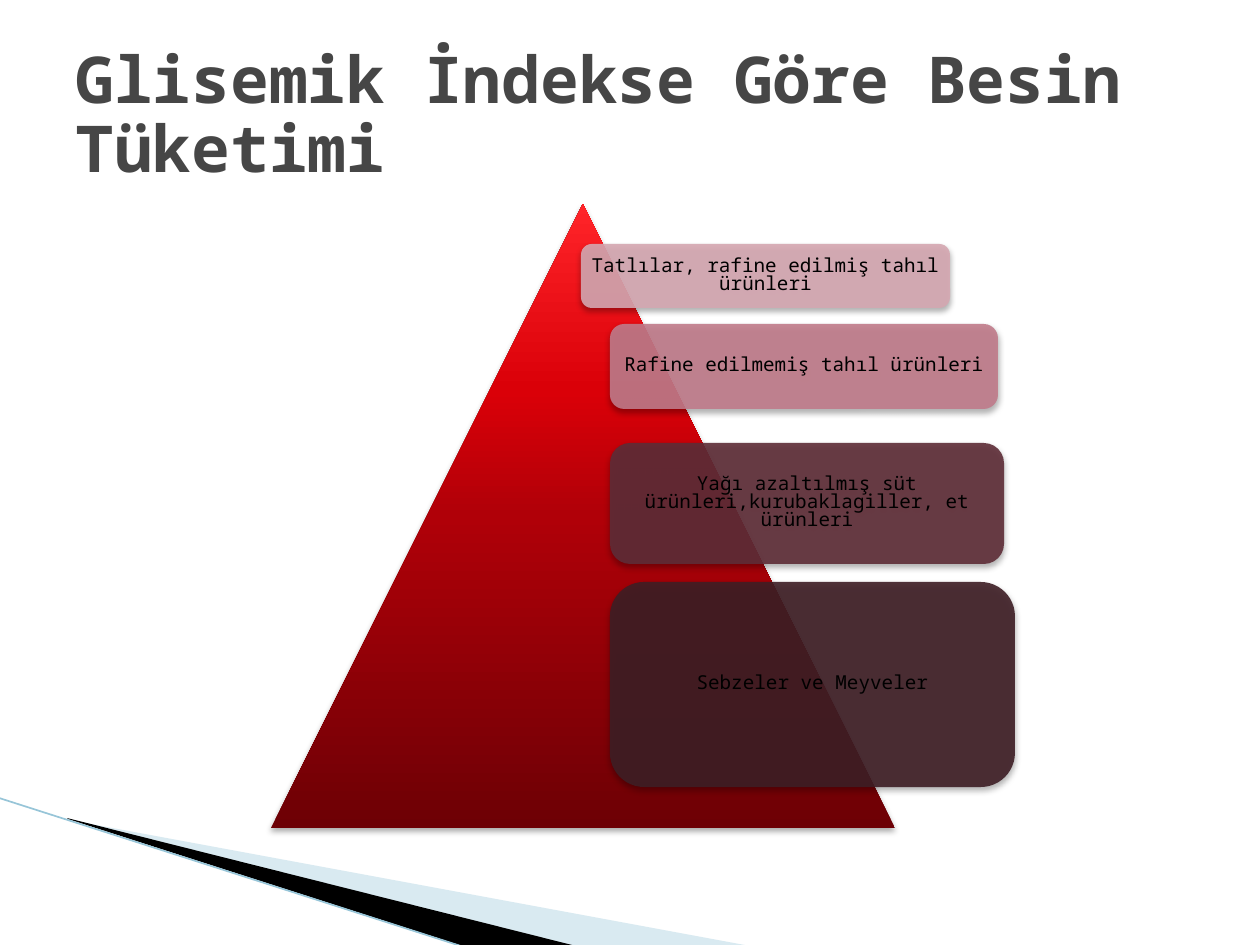
"""Build a slide with a food pyramid ranked by glycemic index."""
from lxml import etree
from pptx import Presentation
from pptx.dml.color import RGBColor
from pptx.enum.shapes import MSO_CONNECTOR, MSO_SHAPE
from pptx.enum.text import MSO_ANCHOR, PP_ALIGN
from pptx.oxml import parse_xml
from pptx.oxml.ns import nsdecls, qn
from pptx.util import Emu, Pt

UNIT = 914400 / 126
FONT = "Noto Sans Mono"
MIDDLE = MSO_ANCHOR.MIDDLE
LEFT, CENTER = PP_ALIGN.LEFT, PP_ALIGN.CENTER
HUES = {
    "title": "464646", "text": "000000", "pale": "A0CBDC", "black": "000000",
    "edge": "97C5D8", "sweet": "D5A7B1", "grain": "C07B8A",
    "dairy": "5E2D37", "green": "3E1E25",
}
STOPS = [(0, "6D0005"), (50, "B00008"), (70, "DA0008"), (100, "FF2429")]
SHADOW = (
    f'<a:outerShdw {nsdecls("a")} blurRad="{Pt(3.5)}" dist="{Pt(2.2)}" '
    'dir="5400000" rotWithShape="0"><a:srgbClr val="000000">'
    '<a:alpha val="32000"/></a:srgbClr></a:outerShdw>'
)


def paint(shape, hue, alpha=100, shade=False):
    shape.fill.solid()
    shape.fill.fore_color.rgb = RGBColor.from_string(HUES[hue])
    shape.line.fill.background()
    shape.shadow.inherit = False
    props = shape._element.spPr
    if alpha < 100:
        tint = props.find(qn("a:solidFill"))[0]
        etree.SubElement(tint, qn("a:alpha")).set("val", str(alpha * 1000))
    if shade:
        props.find(qn("a:effectLst")).append(parse_xml(SHADOW))


def write(shape, text, hue, align, space, face):
    frame = shape.text_frame
    frame.word_wrap = True
    frame.vertical_anchor = MIDDLE
    para = frame.paragraphs[0]
    para.text = text
    para.alignment = align
    para.line_spacing = space
    font = para.runs[0].font
    for key, value in face.items():
        setattr(font, key, value)
    font.color.rgb = RGBColor.from_string(HUES[hue])


deck = Presentation()
deck.slide_width, deck.slide_height = Emu(9144000), Emu(6858000)
slide = deck.slides.add_slide(deck.slide_layouts[6])
shapes = slide.shapes

waves = [
    ("pale", 40, [(69, 820), (750, 946), (575, 946), (69, 819)]),
    ("black", 100, [(67, 818), (576, 946), (469, 948), (68, 819)]),
]
for hue, alpha, points in waves:
    pen = shapes.build_freeform(*points[0], scale=UNIT)
    pen.add_line_segments(points[1:], close=True)
    paint(pen.convert_to_shape(), hue, alpha)

ends = [Emu(round(n * UNIT)) for n in (-1, 798, 467, 948)]
edge = shapes.add_connector(MSO_CONNECTOR.STRAIGHT, *ends)
edge.line.color.rgb = RGBColor.from_string(HUES["edge"])
edge.line.width = Pt(0.95)
etree.SubElement(edge._element.spPr, qn("a:effectLst"))

area = [Emu(round(n * UNIT)) for n in (271, 204, 624, 624)]
cone = shapes.add_shape(MSO_SHAPE.ISOSCELES_TRIANGLE, *area)
paint(cone, "black", shade=True)
stops = "".join(
    f'<a:gs pos="{at * 1000}"><a:srgbClr val="{tone}"/></a:gs>' for at, tone in STOPS
)
blend = parse_xml(
    f'<a:gradFill {nsdecls("a")} rotWithShape="1"><a:gsLst>{stops}</a:gsLst>'
    '<a:lin ang="16200000" scaled="0"/></a:gradFill>'
)
props = cone._element.spPr
props.replace(props.find(qn("a:solidFill")), blend)

foods = [
    ("sweet", (581, 244, 369, 64), "Tatlılar, rafine edilmiş tahıl ürünleri"),
    ("grain", (610, 324, 388, 85), "Rafine edilmemiş tahıl ürünleri"),
    ("dairy", (610, 443, 394, 121),
     "Yağı azaltılmış süt ürünleri,kurubaklagiller, et ürünleri"),
    ("green", (610, 582, 405, 205), "Sebzeler ve Meyveler"),
]
small = {"name": FONT, "size": Pt(11)}
for hue, box, text in foods:
    card = shapes.add_shape(
        MSO_SHAPE.ROUNDED_RECTANGLE, *[Emu(round(n * UNIT)) for n in box]
    )
    paint(card, hue, 90, shade=True)
    for side in ("left", "top", "right", "bottom"):
        setattr(card.text_frame, f"margin_{side}", Emu(round(6 * UNIT)))
    write(card, text, "text", CENTER, 0.78, small)

area = [Emu(round(n * UNIT)) for n in (63, 38, 1134, 158)]
title = shapes.add_textbox(*area)
large = {"name": FONT, "size": Pt(36.9), "bold": True}
write(title, "Glisemik İndekse Göre Besin Tüketimi", "title", LEFT, 0.89, large)

deck.save("out.pptx")
